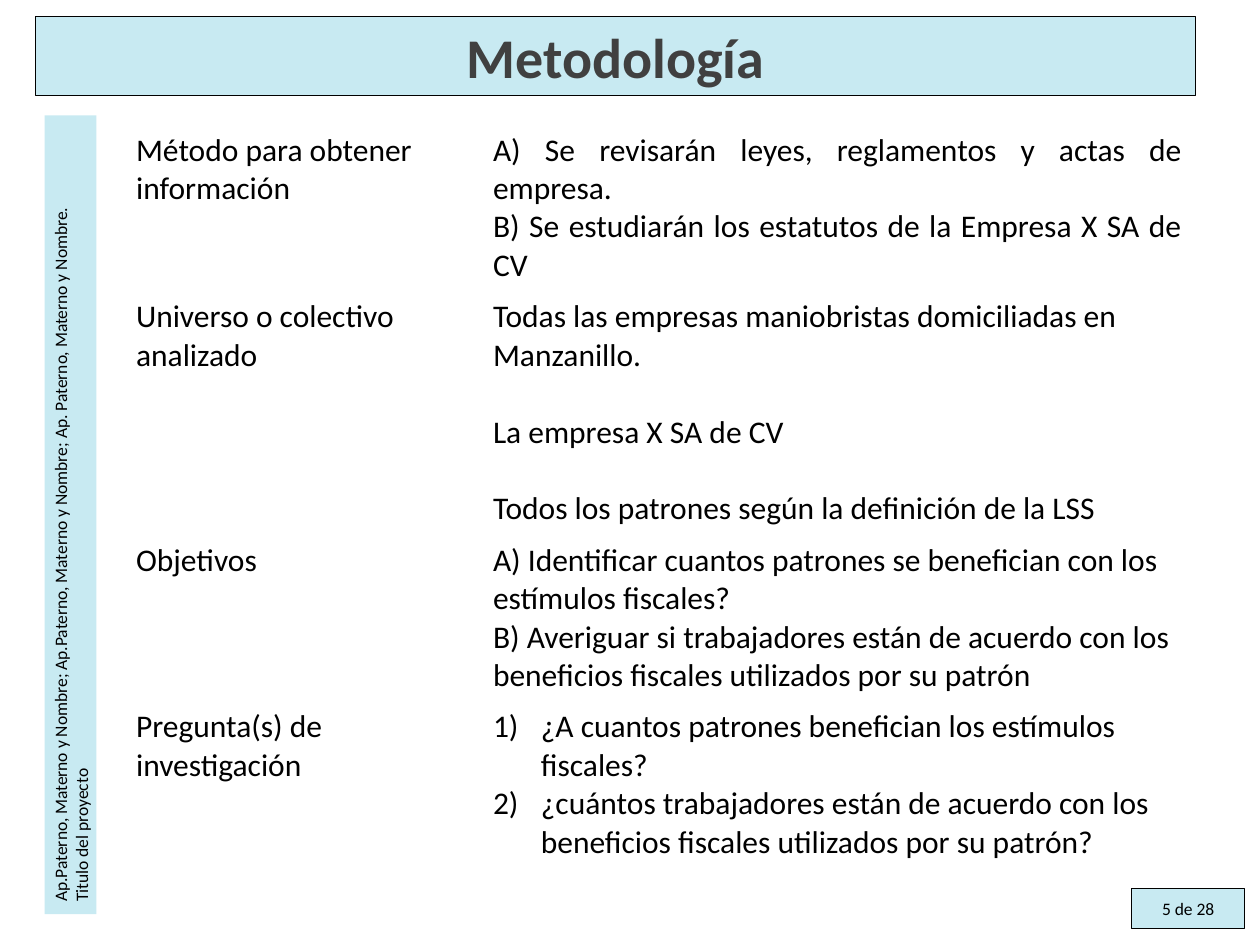
from lxml import etree
from pptx import Presentation, util as u
from pptx.dml.color import RGBColor
from pptx.enum import shapes, text
from pptx.oxml.ns import qn

COLORS = {"panel": "C8EAF2", "line": "000000", "text": "000000", "title": "404040"}
LEFT, JUSTIFY, CENTER = text.PP_ALIGN.LEFT, text.PP_ALIGN.JUSTIFY, text.PP_ALIGN.CENTER

presentation = Presentation()
presentation.slide_width, presentation.slide_height = u.Inches(10), u.Inches(7.5)
slide = presentation.slides.add_slide(presentation.slide_layouts[5])


def write(frame, lines, size, color="text", bold=False, **paragraph_format):
    """Fill a text frame with one paragraph per line, all in one format."""
    frame.text = "\n".join(lines)
    for paragraph in frame.paragraphs:
        for name, value in paragraph_format.items():
            setattr(paragraph, name, value)
        font = paragraph.runs[0].font
        for name, value in {"name": "Calibri", "size": u.Pt(size), "bold": bold}.items():
            setattr(font, name, value)
        font.color.rgb = RGBColor.from_string(COLORS[color])


def style_panel(shape, box, outlined=True):
    """Place a panel and give it the common fill and line."""
    for name, value in zip(("left", "top", "width", "height"), box):
        setattr(shape, name, u.Inches(value))
    shape.fill.solid()
    shape.fill.fore_color.rgb = RGBColor.from_string(COLORS["panel"])
    if outlined:
        shape.line.color.rgb = RGBColor.from_string(COLORS["line"])
        shape.line.width = u.Pt(0.75)
    else:
        shape.line.fill.background()
    shape.text_frame.word_wrap = True
    shape.text_frame.auto_size = text.MSO_AUTO_SIZE.NONE
    shape.text_frame.vertical_anchor = text.MSO_ANCHOR.MIDDLE


# Title
title = slide.shapes.title
style_panel(title, (0.28, 0.13, 9.21, 0.63))
write(title.text_frame, ["Metodología"], 32, "title", bold=True, alignment=CENTER)

# Page counter and rotated sidebar
panels = [
    ((8.98, 7.05, 0.9, 0.32), 0, True, CENTER, ["5 de 28"]),
    ((-2.61, 3.88, 6.34, 0.41), 270, False, LEFT, [
        "Ap.Paterno, Materno y Nombre; Ap.Paterno, Materno y Nombre; "
        "Ap. Paterno, Materno y Nombre.",
        "Titulo del proyecto"]),
]
for box, rotation, outlined, alignment, lines in panels:
    panel = slide.shapes.add_shape(shapes.MSO_SHAPE.RECTANGLE, 0, 0, 0, 0)
    panel.shadow.inherit = False
    panel.rotation = rotation
    style_panel(panel, box, outlined)
    write(panel.text_frame, lines, 10, alignment=alignment)

# Methodology table: heading, answers, paragraph format, row height in text lines
SIZE, LINE = 18, 22
rows = [
    ("Método para obtener información",
     ["A) Se revisarán leyes, reglamentos y actas de empresa.",
      "B) Se estudiarán los estatutos de la Empresa X SA de CV"],
     {"alignment": JUSTIFY}, 4),
    ("Universo o colectivo analizado",
     ["Todas las empresas maniobristas domiciliadas en Manzanillo.",
      "La empresa X SA de CV",
      "Todos los patrones según la definición de la LSS"],
     {"space_after": u.Pt(LINE)}, 6),
    ("Objetivos",
     ["A) Identificar cuantos patrones se benefician con los estímulos fiscales?",
      "B) Averiguar si trabajadores están de acuerdo con los beneficios fiscales "
      "utilizados por su patrón"],
     {}, 4),
    ("Pregunta(s) de investigación",
     ["¿A cuantos patrones benefician los estímulos fiscales?",
      "¿cuántos trabajadores están de acuerdo con los beneficios fiscales "
      "utilizados por su patrón?"],
     {}, 4),
]
table = slide.shapes.add_table(len(rows), 2, u.Inches(0.98), u.Inches(0.99),
                               u.Inches(8.5), u.Inches(5.8)).table
table.first_row = table.horz_banding = False
for column, share in zip(table.columns, (1, 2)):
    column.width = u.Inches(8.5 * share / 3)
for index, (heading, answers, paragraph_format, line_count) in enumerate(rows):
    table.rows[index].height = u.Pt(line_count * LINE) + u.Inches(0.1)
    heading_cell, answer_cell = table.cell(index, 0), table.cell(index, 1)
    write(heading_cell.text_frame, [heading], SIZE)
    write(answer_cell.text_frame, answers, SIZE, **paragraph_format)
    answer_cell.text_frame.paragraphs[-1].space_after = u.Pt(0)
    for cell in (heading_cell, answer_cell):
        cell.fill.background()

# Numbered research questions
for paragraph in table.cell(len(rows) - 1, 1).text_frame.paragraphs:
    properties = paragraph._p.get_or_add_pPr()
    properties.set("marL", str(u.Inches(0.38)))
    properties.set("indent", str(-u.Inches(0.38)))
    etree.SubElement(properties, qn("a:buFont"), typeface="+mj-lt")
    etree.SubElement(properties, qn("a:buAutoNum"), type="arabicParenR")

presentation.save("out.pptx")
